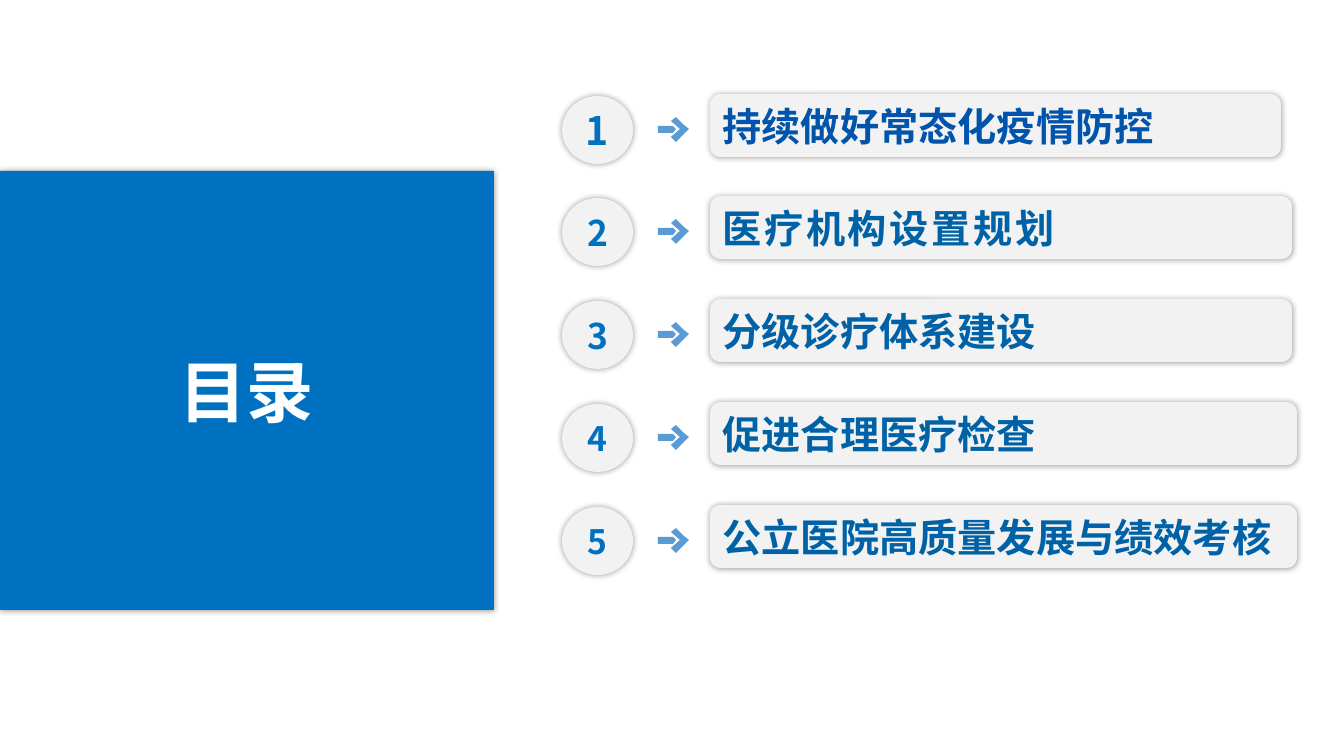
from lxml import etree
from pptx import Presentation
from pptx.dml.color import RGBColor
from pptx.enum.shapes import MSO_SHAPE
from pptx.enum.text import MSO_ANCHOR, PP_ALIGN
from pptx.oxml.ns import qn
from pptx.util import Pt

PX = 9525
FONT = "Noto Sans CJK SC"
RECT = MSO_SHAPE.RECTANGLE
OVAL = MSO_SHAPE.OVAL
ROUNDED = MSO_SHAPE.ROUNDED_RECTANGLE
MIDDLE = MSO_ANCHOR.MIDDLE
CENTER = PP_ALIGN.CENTER
JUSTIFY = PP_ALIGN.JUSTIFY

BLUE = "0070C0"
PALE = "F2F2F2"
ARROW_BLUE = "5B9BD5"
WHITE = "FFFFFF"

ARROW_SHAFT = [(0, 9), (15, 9), (18, 12), (15, 16), (0, 16)]
ARROW_HEAD = [(13, 20), (22, 12), (13, 4), (18, 0), (26, 8), (31, 12), (26, 17), (18, 25)]

ROW_LEFT, FIRST_ROW_TOP, LAST_ROW_TOP = 562, 94, 505
TOPICS = [
    ("持续做好常态化疫情防控", 571, 29.4, "0054AB", 0),
    ("医疗机构设置规划", 582, 26.5, "0062A6", 2),
    ("分级诊疗体系建设", 582, 26.5, "0062A6", 0),
    ("促进合理医疗检查", 587, 25.2, "0062A6", 0),
    ("公立医院高质量发展与绩效考核", 587, 25.2, "0062A6", 0),
]


def paint(shape, color):
    """Give a shape a plain fill with no outline and no shadow."""
    shape.fill.solid()
    shape.fill.fore_color.rgb = RGBColor.from_string(color)
    shape.line.fill.background()
    shape.shadow.inherit = False


def add_glow_shadow(shape):
    """Add a soft, centred black shadow to a painted shape."""
    effects = shape._element.spPr.find(qn("a:effectLst"))
    shadow = etree.SubElement(effects, qn("a:outerShdw"), blurRad=str(Pt(5)),
                              dist="0", dir="0", algn="ctr", rotWithShape="0")
    black = etree.SubElement(shadow, qn("a:srgbClr"), val="000000")
    etree.SubElement(black, qn("a:alpha"), val="40000")


def add_panel(slide, kind, box, fill):
    """Add a shadowed preset shape in a px box."""
    panel = slide.shapes.add_shape(kind, *(length * PX for length in box))
    paint(panel, fill)
    add_glow_shadow(panel)
    return panel


def write(shape, text, size, color, align, spacing=0):
    """Write one bold line, vertically centred in a shape."""
    frame = shape.text_frame
    frame.text = text
    frame.word_wrap = True
    frame.vertical_anchor = MIDDLE
    paragraph = frame.paragraphs[0]
    paragraph.alignment = align
    run = paragraph.runs[0]
    run.font.size = Pt(size)
    run.font.bold = True
    run.font.color.rgb = RGBColor.from_string(color)
    run.font.name = FONT
    properties = run._r.get_or_add_rPr()
    etree.SubElement(properties, qn("a:ea"), typeface=FONT)
    if spacing:
        properties.set("spc", str(spacing * 100))


def add_title_block(slide, box):
    """Place the blue contents heading."""
    write(add_panel(slide, RECT, box, BLUE), "目录", 50.4, WHITE, CENTER)


def add_arrow(slide, left, top):
    """Draw an arrow made of a shaft and a separate chevron head."""
    builder = slide.shapes.build_freeform(*ARROW_SHAFT[0], scale=PX)
    builder.add_line_segments(ARROW_SHAFT[1:], close=True)
    builder.move_to(*ARROW_HEAD[0])
    builder.add_line_segments(ARROW_HEAD[1:], close=True)
    paint(builder.convert_to_shape(left * PX, top * PX), ARROW_BLUE)


def add_topic_row(slide, left, top, number, topic):
    """Place a numbered circle, an arrow and a topic bar."""
    title, bar_width, number_size, color, spacing = topic
    circle = add_panel(slide, OVAL, (left, top + 2, 71, 68), PALE)
    write(circle, str(number), number_size, BLUE, CENTER)
    frame = circle.text_frame
    frame.margin_left = frame.margin_right = frame.margin_top = frame.margin_bottom = 0
    add_arrow(slide, left + 96, top + 23)
    bar = add_panel(slide, ROUNDED, (left + 148, top, bar_width, 63), PALE)
    write(bar, title, 29.4, color, JUSTIFY, spacing)


def main():
    """Build the contents slide."""
    deck = Presentation()
    deck.slide_width, deck.slide_height = 1344 * PX, 756 * PX
    slide = deck.slides.add_slide(deck.slide_layouts[6])
    add_title_block(slide, (0, 171, 494, 439))
    pitch = (LAST_ROW_TOP - FIRST_ROW_TOP) / (len(TOPICS) - 1)
    for index, topic in enumerate(TOPICS):
        top = FIRST_ROW_TOP + int(index * pitch)
        add_topic_row(slide, ROW_LEFT, top, index + 1, topic)
    deck.save("out.pptx")


if __name__ == "__main__":
    main()
